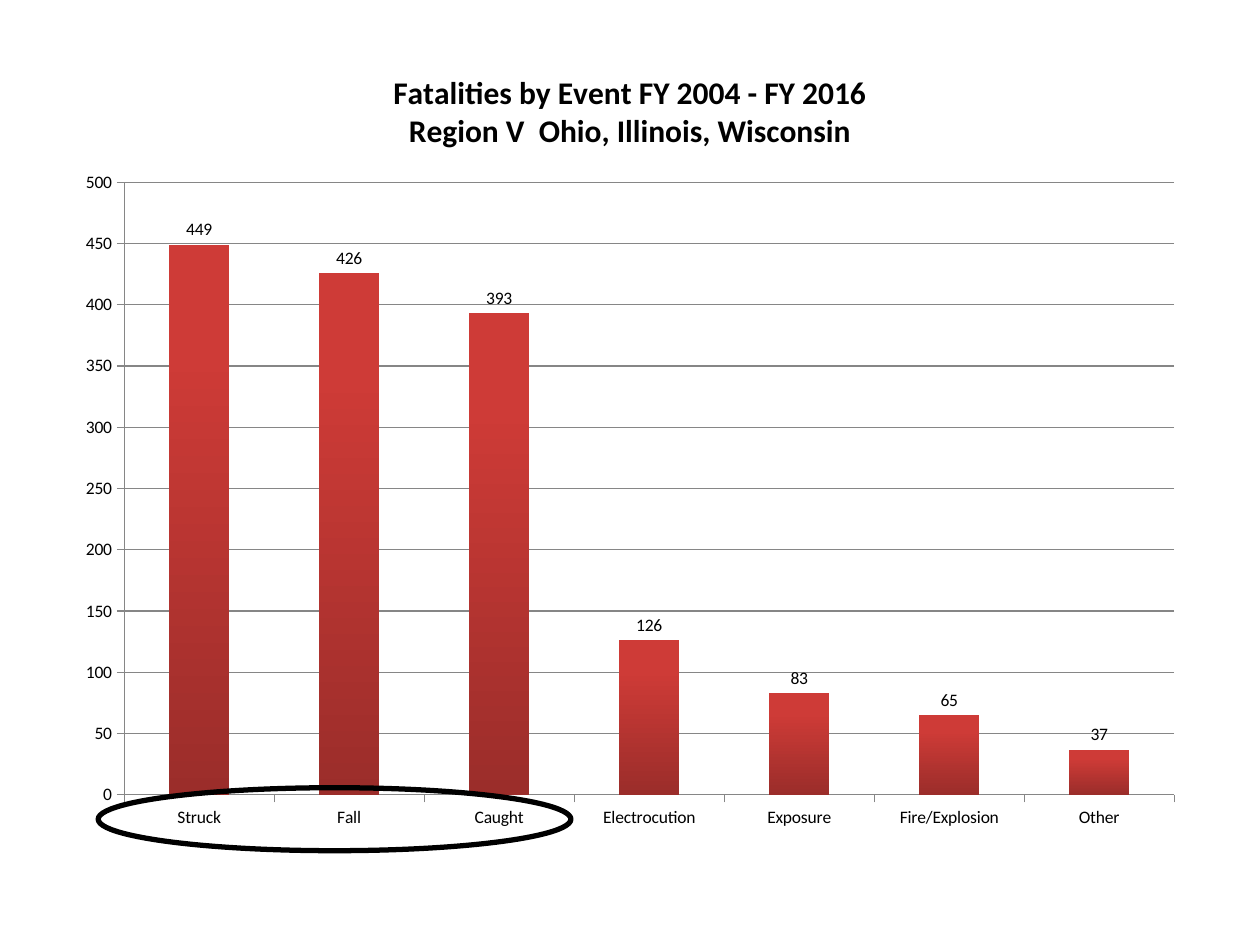
from dataclasses import dataclass

from lxml import etree
from pptx import Presentation
from pptx import util as u
from pptx.chart.data import CategoryChartData
from pptx.dml.color import RGBColor
from pptx.enum import chart as ch, shapes, text
from pptx.oxml.ns import qn


@dataclass(frozen=True)
class Theme:
    font: str = "Calibri"
    ink: str = "000000"
    grid: str = "868686"
    bar_bottom: str = "9B2D2A"
    bar_top: str = "CE3B37"
    title_size: int = 18
    label_size: int = 10


THEME = Theme()
TITLE = ["Fatalities by Event FY 2004 - FY 2016", "Region V  Ohio, Illinois, Wisconsin"]
FATALITIES = {
    "Struck": 449, "Fall": 426, "Caught": 393, "Electrocution": 126,
    "Exposure": 83, "Fire/Explosion": 65, "Other": 37,
}


def rgb(value):
    return RGBColor.from_string(value)


def style_font(font, size, bold=False, color=THEME.ink):
    font.name, font.size, font.bold = THEME.font, u.Pt(size), bold
    font.color.rgb = rgb(color)


def write_lines(frame, lines, size, bold=False, align=text.PP_ALIGN.CENTER):
    for number, line in enumerate(lines):
        paragraph = frame.paragraphs[0] if number == 0 else frame.add_paragraph()
        paragraph.alignment = align
        run = paragraph.add_run()
        run.text = line
        style_font(run.font, size, bold)


def place_plot(chart, **fractions):
    """Fix the inner plot area as fractions of the chart."""
    plot_area = chart.plots[0]._element.getparent()
    for old in plot_area.findall(qn("c:layout")):
        plot_area.remove(old)
    layout = etree.Element(qn("c:layout"))
    manual = etree.SubElement(layout, qn("c:manualLayout"))
    settings = {"layoutTarget": "inner", "xMode": "edge", "yMode": "edge", **fractions}
    for tag, value in settings.items():
        etree.SubElement(manual, qn(f"c:{tag}")).set("val", str(value))
    plot_area.insert(0, layout)


def style_line(line, color, width):
    line.color.rgb = rgb(color)
    line.width = u.Pt(width)


def style_axis(axis):
    axis.major_tick_mark = ch.XL_TICK_MARK.OUTSIDE
    axis.minor_tick_mark = ch.XL_TICK_MARK.NONE
    style_line(axis.format.line, THEME.grid, 0.75)
    style_font(axis.tick_labels.font, THEME.label_size)


def add_fatalities_chart(slide):
    data = CategoryChartData()
    data.categories = list(FATALITIES)
    data.add_series("Series 1", list(FATALITIES.values()))
    chart = slide.shapes.add_chart(
        ch.XL_CHART_TYPE.COLUMN_CLUSTERED,
        u.Cm(1.27), u.Cm(0.91), u.Cm(22.86), u.Cm(16.08), data).chart
    style_font(chart.font, THEME.label_size)
    chart.has_legend = False
    chart.has_title = True
    write_lines(chart.chart_title.text_frame, TITLE, THEME.title_size, bold=True)
    chart.chart_title.include_in_layout = False
    place_plot(chart, x=0.054, y=0.172, w=0.926, h=0.768)

    # Axes and gridlines
    events, deaths = chart.category_axis, chart.value_axis
    for axis in (events, deaths):
        style_axis(axis)
    deaths.minimum_scale, deaths.maximum_scale, deaths.major_unit = 0, 500, 50
    deaths.has_major_gridlines = True
    style_line(deaths.major_gridlines.format.line, THEME.grid, 0.75)

    # Bars, dark at the foot and lighter towards the top
    plot = chart.plots[0]
    plot.gap_width = 150
    plot.vary_by_categories = False
    bars = plot.series[0]
    bars.invert_if_negative = False
    fill = bars.format.fill
    fill.gradient()
    fill.gradient_angle = 90
    stops = [(0, THEME.bar_bottom), (0.8, THEME.bar_top)]
    for stop, (position, color) in zip(fill.gradient_stops, stops):
        stop.position = position
        stop.color.rgb = rgb(color)

    # Values above the bars
    labels = bars.data_labels
    labels.show_value = True
    labels.position = ch.XL_LABEL_POSITION.OUTSIDE_END
    style_font(labels.font, THEME.label_size)


def add_highlight(slide, left, top, width, height):
    ring = slide.shapes.add_shape(
        shapes.MSO_SHAPE.OVAL, u.Cm(left), u.Cm(top), u.Cm(width), u.Cm(height))
    ring.shadow.inherit = False
    ring.fill.background()
    style_line(ring.line, THEME.ink, 3)


def main():
    deck = Presentation()
    deck.slide_width, deck.slide_height = u.Cm(25.4), u.Cm(19.05)
    slide = deck.slides.add_slide(deck.slide_layouts[6])
    add_fatalities_chart(slide)
    # Ring around the three leading events
    add_highlight(slide, 1.98, 15.88, 9.53, 1.27)
    deck.save("out.pptx")


if __name__ == "__main__":
    main()
